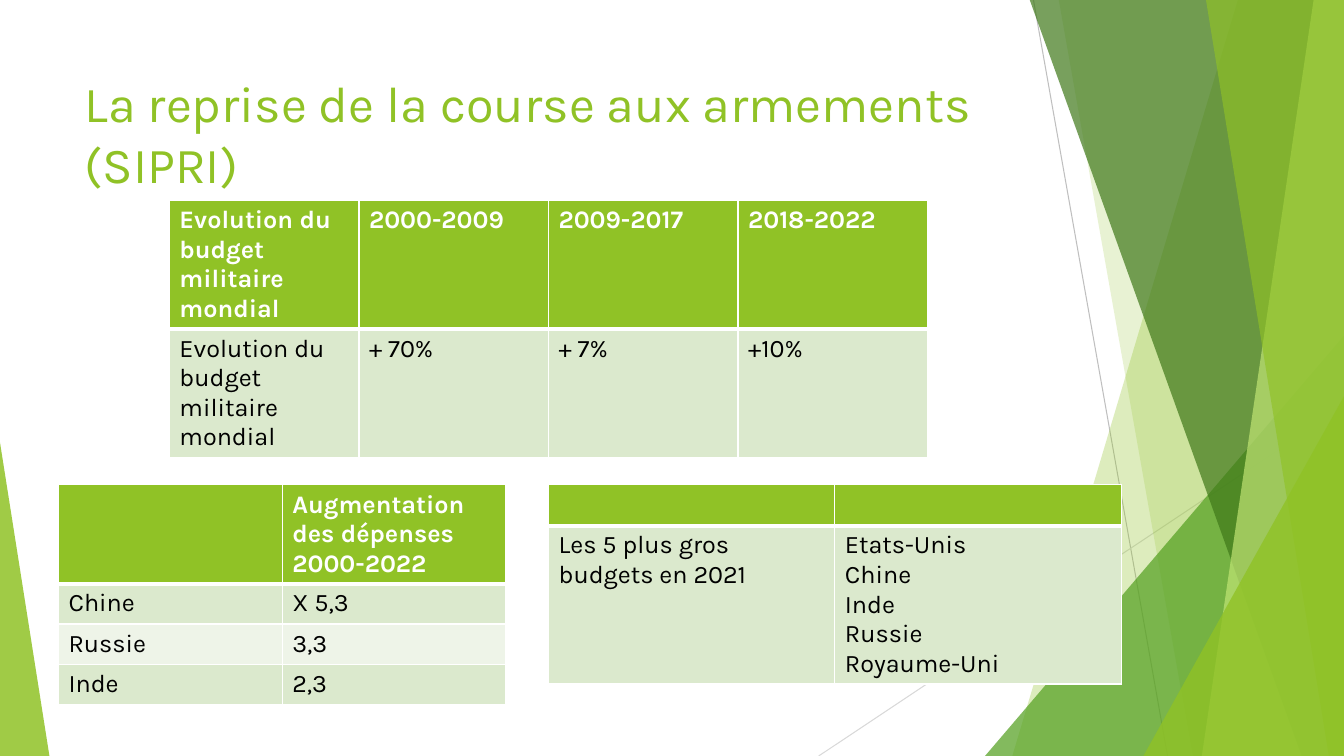
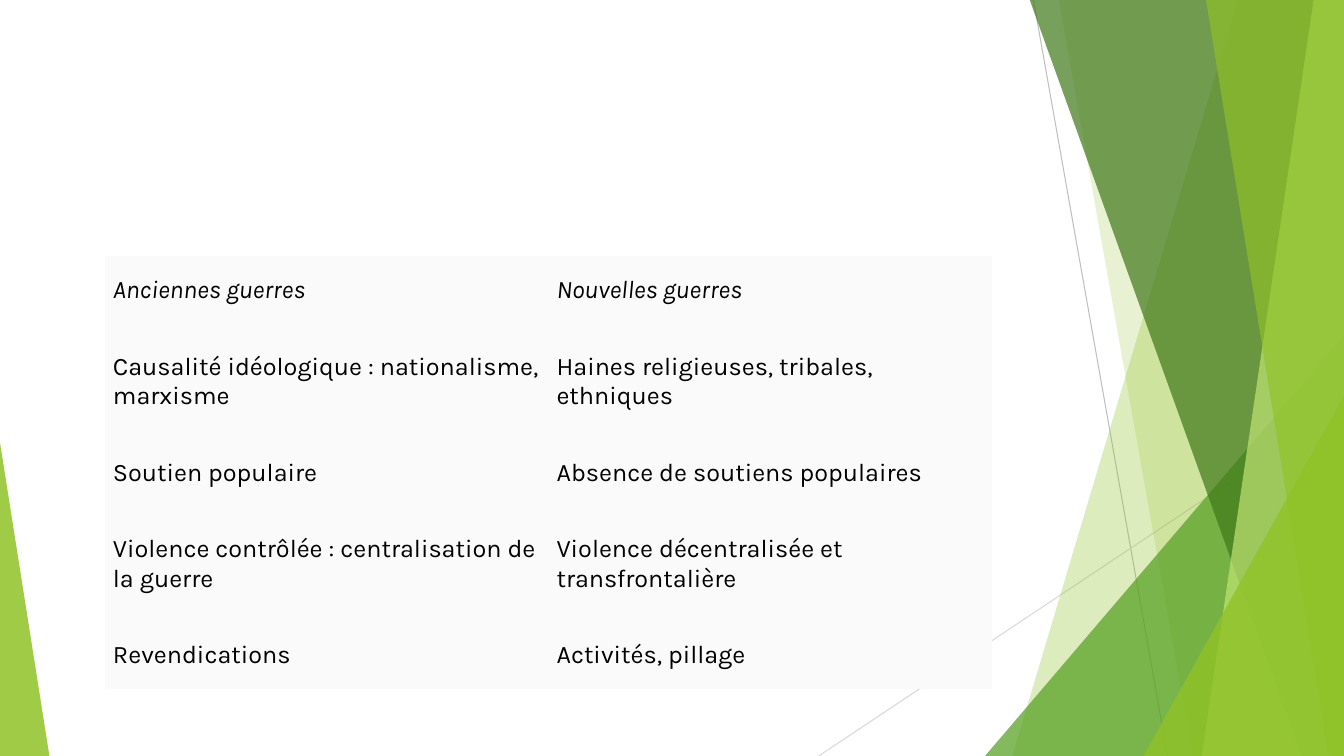
from lxml import etree
from pptx import Presentation
from pptx.dml.color import RGBColor
from pptx.enum.shapes import MSO_CONNECTOR, MSO_SHAPE
from pptx.enum.text import MSO_ANCHOR, MSO_AUTO_SIZE
from pptx.oxml.ns import qn
from pptx.util import Inches, Pt

STRAIGHT = MSO_CONNECTOR.STRAIGHT
TRIANGLE = MSO_SHAPE.ISOSCELES_TRIANGLE
TOP, MIDDLE = MSO_ANCHOR.TOP, MSO_ANCHOR.MIDDLE
NO_AUTOFIT = MSO_AUTO_SIZE.NONE

FONT = "Karla"
GREEN, MID_GREEN, DARK_GREEN, LIME = "90C226", "54A021", "3F7819", "C0E474"
WHITE, BLACK, PALE_GREY = "FFFFFF", "000000", "FAFAFA"
ROW_TINTS = ["EEF4E8", "DBE9CD"]
SLIDE_W, SLIDE_H = 13.33, 7.5
TITLE_SIZE = 36


def paint(fill, color):
    """Make a fill solid, in a hex colour."""
    fill.solid()
    fill.fore_color.rgb = RGBColor.from_string(color)


def write(frame, text, size=18, color=BLACK, bold=False, italic=False):
    """Fill a text frame, one paragraph for each line of the text."""
    for number, line in enumerate(text.split("\n")):
        paragraph = frame.add_paragraph() if number else frame.paragraphs[0]
        paragraph.text = line
        for run in paragraph.runs:
            run.font.name = FONT
            run.font.size = Pt(size)
            run.font.bold = bold
            run.font.italic = italic
            paint(run.font.fill, color)


prs = Presentation()
prs.slide_width, prs.slide_height = Inches(SLIDE_W), Inches(SLIDE_H)
layout = prs.slide_layouts[5]

# Title style, shared through the master and the layout
title_level = next(prs.slide_master.element.iter(qn("p:titleStyle"))).find(qn("a:lvl1pPr"))
title_level.set("algn", "l")
title_level.find(qn("a:defRPr")).set("sz", str(TITLE_SIZE * 100))
layout_title = layout.placeholders[0]
layout_title.left, layout_title.top = Inches(0.74), Inches(0.67)
layout_title.width, layout_title.height = Inches(9.4), Inches(1.44)
layout_title.text_frame.vertical_anchor = TOP
layout_title.text_frame.auto_size = NO_AUTOFIT

arms_slide = prs.slides.add_slide(layout)
wars_slide = prs.slides.add_slide(layout)

# Facets, from back to front: drawn on a slide, then moved to the layout
rays = [
    ((10.25, 0), (11.58, SLIDE_H), "BFBFBF"),
    ((SLIDE_W, 4.03), (8.12, SLIDE_H), "D9D9D9"),
]
# A band has its left edge's x at top and bottom; a triangle its box and apex
facets = [
    ("band", (12.28, 10.04), GREEN, 30),
    ("band", (10.5, 11.83), GREEN, 20),
    ("triangle", (9.77, 3.33, 3.56, 1), MID_GREEN, 72),
    ("band", (10.21, 12.91), DARK_GREEN, 70),
    ("band", (13.03, 11.92), LIME, 70),
    ("band", (11.96, 13.18), GREEN, 65),
    ("triangle", (11.34, 3.93, 1.99, 1), GREEN, 80),
    ("triangle", (0, 4.39, 0.49, 0), GREEN, 85),
]
decoration = []
for start, end, color in rays:
    ray = arms_slide.shapes.add_connector(STRAIGHT, *map(Inches, start + end))
    paint(ray.line.fill, color)
    ray.line.width = Pt(0.75)
    etree.SubElement(ray.element.spPr, qn("a:effectLst"))
    decoration.append(ray)

for kind, geometry, color, opacity in facets:
    if kind == "band":
        top_x, bottom_x = geometry
        outline = arms_slide.shapes.build_freeform(Inches(top_x), Inches(-0.01))
        corners = [(SLIDE_W, -0.01), (SLIDE_W, SLIDE_H), (bottom_x, SLIDE_H)]
        outline.add_line_segments([(Inches(x), Inches(y)) for x, y in corners])
        facet = outline.convert_to_shape()
    else:
        left, top, width, apex = geometry
        box = map(Inches, (left, top, width, SLIDE_H - top))
        facet = arms_slide.shapes.add_shape(TRIANGLE, *box)
        facet.adjustments[0] = apex
    paint(facet.fill, color)
    facet_color = facet.element.spPr.find(qn("a:solidFill")).find(qn("a:srgbClr"))
    etree.SubElement(facet_color, qn("a:alpha")).set("val", str(opacity * 1000))
    facet.line.fill.background()
    facet.shadow.inherit = False
    decoration.append(facet)

for shape_id, part in enumerate(decoration, start=20):
    next(part.element.iter(qn("p:cNvPr"))).set("id", str(shape_id))
    layout_title.element.addprevious(part.element)

# Titles
write(arms_slide.shapes.title.text_frame,
      "La reprise de la course aux armements\v(SIPRI)", size=TITLE_SIZE, color=GREEN)
unused_title = wars_slide.shapes.title.element
unused_title.getparent().remove(unused_title)

# Tables: slide, left, top, column width, row heights, banded, rows
tables = [
    (arms_slide, 1.68, 1.99, 1.88, [1.27, 1.27], True, [
        ["Evolution du budget militaire mondial", "2000-2009", "2009-2017", "2018-2022"],
        ["Evolution du budget militaire mondial", "+ 70%", "+ 7%", "+10%"],
    ]),
    (arms_slide, 0.58, 4.81, 2.22, [0.98, 0.4, 0.4, 0.4], True, [
        ["", "Augmentation des dépenses 2000-2022"],
        ["Chine", "X 5,3"],
        ["Russie", "3,3"],
        ["Inde", "2,3"],
    ]),
    (arms_slide, 5.44, 4.81, 2.84, [0.4, 1.57], True, [
        ["", ""],
        ["Les 5 plus gros budgets en 2021",
         "Etats-Unis\nChine\nInde\nRussie\nRoyaume-Uni"],
    ]),
    (wars_slide, 1.04, 2.54, 4.4, [0.68, 1.13, 0.68, 1.13, 0.68], False, [
        ["Anciennes guerres", "Nouvelles guerres"],
        ["Causalité idéologique : nationalisme, marxisme",
         "Haines religieuses, tribales, ethniques"],
        ["Soutien populaire", "Absence de soutiens populaires"],
        ["Violence contrôlée : centralisation de la guerre",
         "Violence décentralisée et transfrontalière"],
        ["Revendications", "Activités, pillage"],
    ]),
]
for slide, left, top, col_width, heights, banded, rows in tables:
    col_count = len(rows[0])
    table = slide.shapes.add_table(
        len(rows), col_count, Inches(left), Inches(top),
        Inches(col_width * col_count), Inches(sum(heights))).table
    table.first_row = table.horz_banding = banded
    for column in table.columns:
        column.width = Inches(col_width)
    for row_no, (height, texts) in enumerate(zip(heights, rows)):
        table.rows[row_no].height = Inches(height)
        is_header = row_no == 0
        for col_no, text in enumerate(texts):
            cell = table.cell(row_no, col_no)
            if banded:
                paint(cell.fill, GREEN if is_header else ROW_TINTS[row_no % 2])
                write(cell.text_frame, text, bold=is_header,
                      color=WHITE if is_header else BLACK)
            else:
                paint(cell.fill, PALE_GREY)
                write(cell.text_frame, text, italic=is_header)
                cell.vertical_anchor = MIDDLE
                cell.margin_left = cell.margin_right = Inches(0.08)
                cell.margin_top = cell.margin_bottom = Inches(0.08)

            # White rules, thicker under the header; none in the plain table
            properties = cell._tc.get_or_add_tcPr()
            for position, side in enumerate(["lnL", "lnR", "lnT", "lnB"]):
                border = etree.Element(qn(f"a:{side}"))
                properties.insert(position, border)
                if not banded:
                    etree.SubElement(border, qn("a:noFill"))
                    continue
                under_header = (row_no, side) in [(0, "lnB"), (1, "lnT")]
                border.set("w", str(Pt(3 if under_header else 1)))
                rule_fill = etree.SubElement(border, qn("a:solidFill"))
                etree.SubElement(rule_fill, qn("a:srgbClr")).set("val", WHITE)

prs.save("out.pptx")
